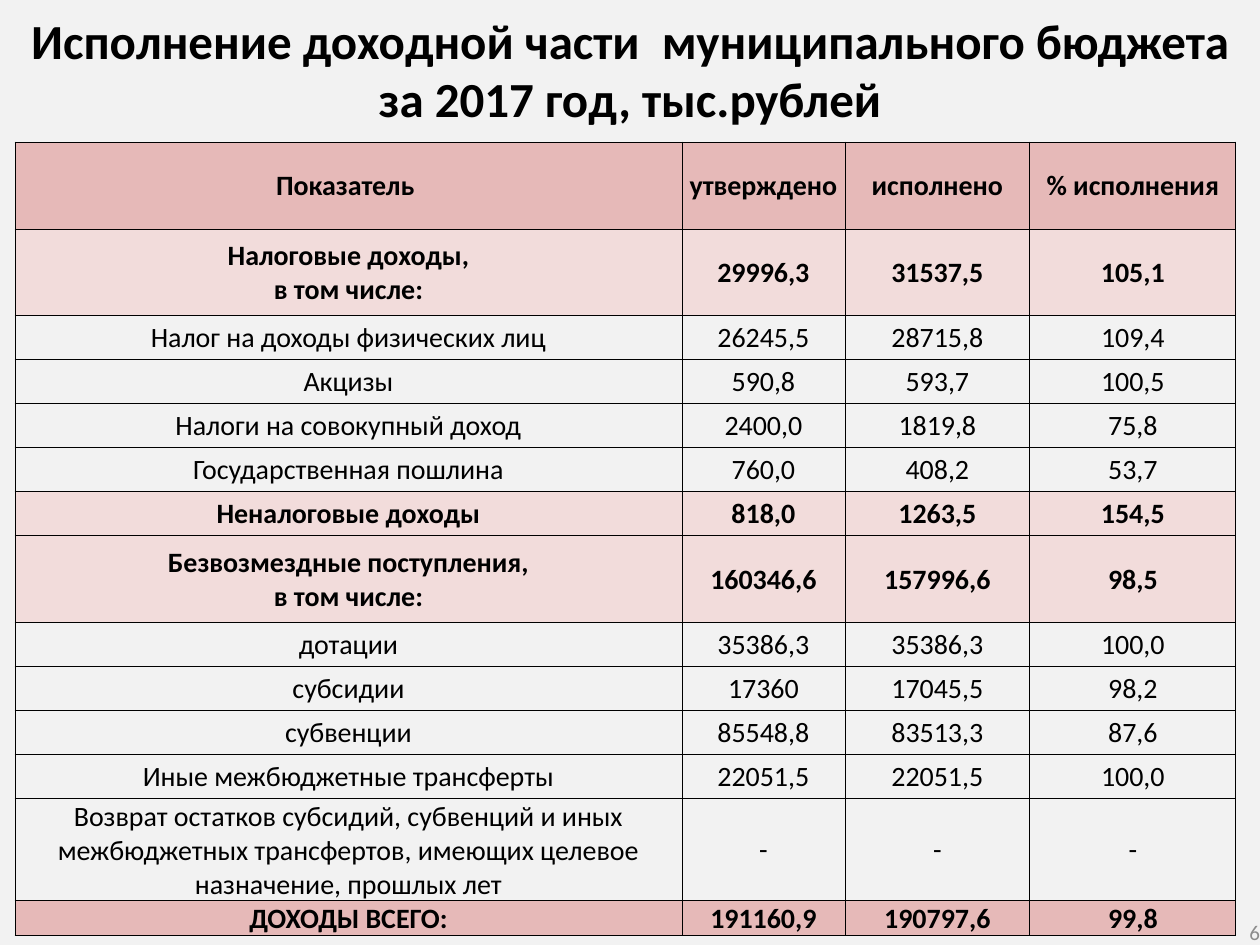
import pptx
import pptx.dml.color
import pptx.enum.text
import pptx.oxml
import pptx.oxml.ns
import pptx.util

RGBColor = pptx.dml.color.RGBColor
ALIGN = pptx.enum.text.PP_ALIGN
ANCHOR = pptx.enum.text.MSO_ANCHOR

BLACK = RGBColor(0x00, 0x00, 0x00)
GREY = RGBColor(0x8C, 0x8C, 0x8C)
PAPER = RGBColor(0xF2, 0xF2, 0xF2)
ROSE = RGBColor(0xE6, 0xB9, 0xB8)
BLUSH = RGBColor(0xF2, 0xDC, 0xDB)

FONT = "Calibri"
PX = 914400 // 126

TITLE = "Исполнение доходной части  муниципального бюджета\nза 2017 год, тыс.рублей"
PAGE_NUMBER = "6"

COLUMN_WIDTHS = [667, 163, 185, 206]
ROW_STYLES = {
    "total": (ROSE, True),
    "group": (BLUSH, True),
    "item": (None, False),
}
ROWS = [
    ("total", 87, "Показатель ", "утверждено", "исполнено", "% исполнения"),
    ("group", 87, "Налоговые доходы,\vв том числе:", "29996,3", "31537,5", "105,1"),
    ("item", 44, "Налог на доходы физических лиц", "26245,5", "28715,8", "109,4"),
    ("item", 44, "Акцизы", "590,8", "593,7", "100,5"),
    ("item", 44, "Налоги на совокупный доход", "2400,0", "1819,8", "75,8"),
    ("item", 44, "Государственная пошлина", "760,0", "408,2", "53,7"),
    ("group", 44, "Неналоговые доходы", "818,0", "1263,5", "154,5"),
    ("group", 87, "Безвозмездные поступления,\vв том числе:", "160346,6", "157996,6", "98,5"),
    ("item", 44, "дотации", "35386,3", "35386,3", "100,0"),
    ("item", 44, "субсидии", "17360", "17045,5", "98,2"),
    ("item", 44, "субвенции", "85548,8", "83513,3", "87,6"),
    ("item", 44, "Иные межбюджетные трансферты", "22051,5", "22051,5", "100,0"),
    ("item", 102, "Возврат остатков субсидий, субвенций и иных межбюджетных трансфертов, "
     "имеющих целевое назначение, прошлых лет", "-", "-", "-"),
    ("total", 35, "ДОХОДЫ ВСЕГО:", "191160,9", "190797,6", "99,8"),
]


def set_margins(target, left, top, right, bottom):
    target.margin_left = left * PX
    target.margin_top = top * PX
    target.margin_right = right * PX
    target.margin_bottom = bottom * PX


def write(frame, text, size, color, bold, align):
    frame.text = text
    frame.word_wrap = True
    for para in frame.paragraphs:
        para.alignment = align
        for span in para.runs:
            span.font.name = FONT
            span.font.size = pptx.util.Pt(size)
            span.font.bold = bold
            span.font.color.rgb = color


def add_text(page, place, margins, anchor, *style):
    box = page.shapes.add_textbox(*(length * PX for length in place))
    set_margins(box.text_frame, *margins)
    box.text_frame.vertical_anchor = anchor
    write(box.text_frame, *style)


def add_borders(cell):
    properties = cell._tc.get_or_add_tcPr()
    for index, side in enumerate("LRTB"):
        properties.insert(index, pptx.oxml.parse_xml(
            f'<a:ln{side} {pptx.oxml.ns.nsdecls("a")} w="{pptx.util.Pt(0.5)}">'
            f'<a:solidFill><a:srgbClr val="{BLACK}"/></a:solidFill></a:ln{side}>'))


def add_budget_table(page, left, top):
    width = sum(COLUMN_WIDTHS)
    height = sum(row[1] for row in ROWS)
    table = page.shapes.add_table(
        len(ROWS), len(COLUMN_WIDTHS), left * PX, top * PX, width * PX, height * PX).table
    for column, column_width in zip(table.columns, COLUMN_WIDTHS):
        column.width = column_width * PX
    for row, (style, row_height, *texts) in zip(table.rows, ROWS):
        row.height = row_height * PX
        fill, bold = ROW_STYLES[style]
        for cell, text in zip(row.cells, texts):
            set_margins(cell, 1, 1, 1, 0)
            cell.vertical_anchor = ANCHOR.MIDDLE
            if fill is None:
                cell.fill.background()
            else:
                cell.fill.solid()
                cell.fill.fore_color.rgb = fill
            write(cell.text_frame, text, 16, BLACK, bold, ALIGN.CENTER)
            add_borders(cell)


def main():
    deck = pptx.Presentation()
    deck.slide_width = 1260 * PX
    deck.slide_height = 945 * PX
    page = deck.slides.add_slide(deck.slide_layouts[6])
    page.background.fill.solid()
    page.background.fill.fore_color.rgb = PAPER
    add_text(page, (0, 0, 1260, 135), (13, 10, 13, 6), ANCHOR.TOP,
             TITLE, 28, BLACK, True, ALIGN.CENTER)
    add_budget_table(page, 15, 142)
    add_text(page, (966, 919, 294, 26), (0, 0, 0, 0), ANCHOR.MIDDLE,
             PAGE_NUMBER, 12, GREY, False, ALIGN.RIGHT)
    deck.save("out.pptx")


if __name__ == "__main__":
    main()
